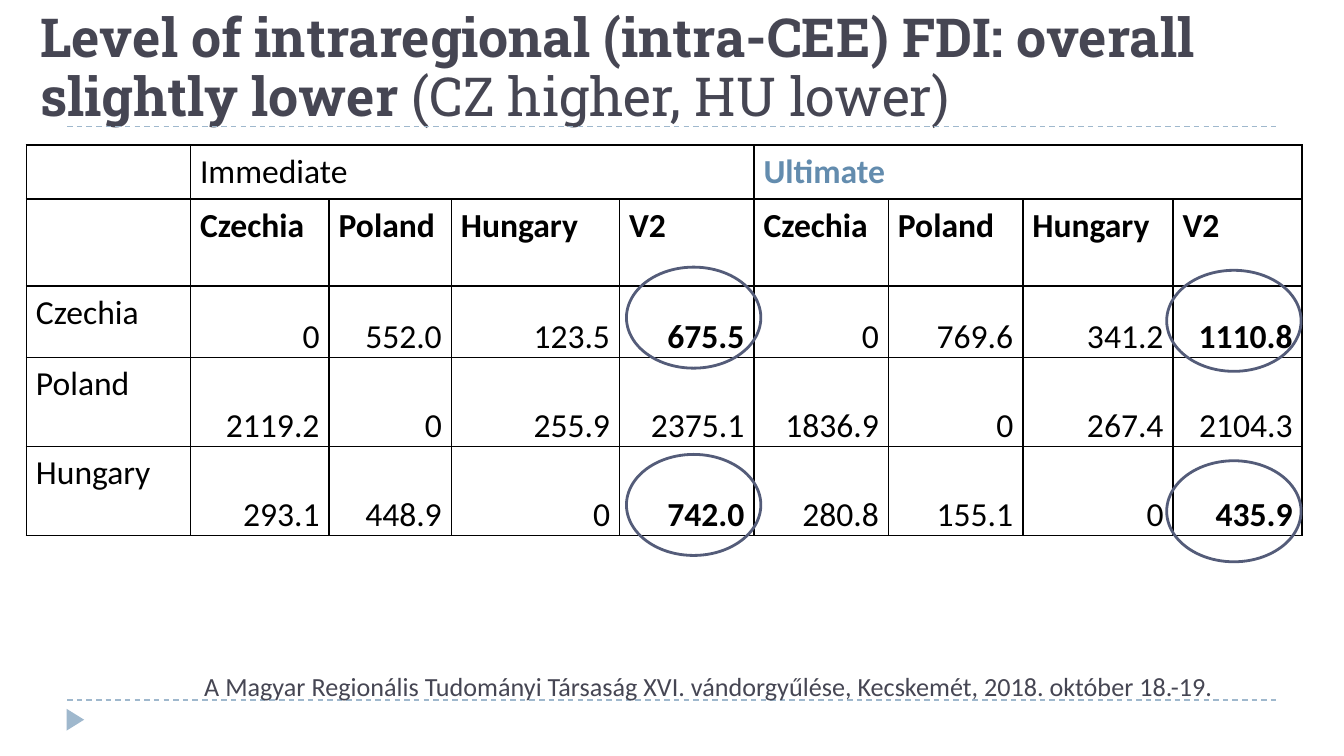
from typing import NamedTuple

from lxml.etree import SubElement
from pptx import Presentation
from pptx.dml.color import RGBColor
from pptx.enum.dml import MSO_LINE_DASH_STYLE as Dash
from pptx.enum.shapes import MSO_CONNECTOR as Connector, MSO_SHAPE as Shape
from pptx.enum.text import MSO_ANCHOR as Anchor, MSO_AUTO_SIZE as AutoSize, PP_ALIGN as Align
from pptx.oxml.ns import qn
from pptx.util import Cm, Pt

BLACK, SLATE, ACCENT, PALE, RING = "000000", "464653", "638CAE", "9FB8CD", "545C79"


class Ring(NamedTuple):
    left: float
    top: float


class FdiRow(NamedTuple):
    country: str
    immediate: tuple[str, ...]
    ultimate: tuple[str, ...]
    bold_totals: bool


COUNTRIES = ("Czechia", "Poland", "Hungary", "V2")
FDI_ROWS = [
    FdiRow("Czechia", ("0", "552.0", "123.5", "675.5"), ("0", "769.6", "341.2", "1110.8"), True),
    FdiRow("Poland", ("2119.2", "0", "255.9", "2375.1"), ("1836.9", "0", "267.4", "2104.3"), False),
    FdiRow("Hungary", ("293.1", "448.9", "0", "742.0"), ("280.8", "155.1", "0", "435.9"), True),
]
COLUMN_WIDTHS = (3.1, 2.62, 2.31, 3.18, 2.54, 2.54, 2.54, 2.84, 2.44)
ROW_HEIGHTS = (1.02, 1.65, 1.35, 1.68, 1.68)
RINGS = [Ring(11.84, 5.05), Ring(11.84, 8.59), Ring(22.05, 5.11), Ring(22.05, 8.71)]


def rgb(color: str) -> RGBColor:
    return RGBColor.from_string(color)


def style_run(run, size: float, color: str, bold: bool = False, font: str = "Calibri") -> None:
    run.font.name = font
    run.font.size = Pt(size)
    run.font.bold = bold
    run.font.color.rgb = rgb(color)


def draw_rule(slide, y: float) -> None:
    rule = slide.shapes.add_connector(Connector.STRAIGHT, Cm(1.27), Cm(y), Cm(24.13), Cm(y))
    rule.line.color.rgb = rgb(PALE)
    rule.line.width = Pt(0.75)
    rule.line.dash_style = Dash.DASH
    SubElement(rule._element.spPr, qn("a:effectLst"))


def draw_ring(slide, ring: Ring) -> None:
    oval = slide.shapes.add_shape(Shape.OVAL, Cm(ring.left), Cm(ring.top), Cm(2.54), Cm(1.91))
    oval.shadow.inherit = False
    oval.fill.background()
    oval.line.color.rgb = rgb(RING)
    oval.line.width = Pt(1.5)


def frame_cell(cell) -> None:
    """Black border on every side, no fill, tight margins."""
    properties = cell._tc.get_or_add_tcPr()
    for side in ("a:lnL", "a:lnR", "a:lnT", "a:lnB"):
        border = SubElement(properties, qn(side), w=str(Pt(1)))
        fill = SubElement(border, qn("a:solidFill"))
        SubElement(fill, qn("a:srgbClr"), val=BLACK)
    cell.fill.background()
    cell.margin_left = cell.margin_right = Cm(0.18)
    cell.margin_top = cell.margin_bottom = Cm(0)


def write_cell(cell, text: str, bold: bool = False, color: str = BLACK, number: bool = False) -> None:
    cell.text_frame.text = text
    paragraph = cell.text_frame.paragraphs[0]
    paragraph.line_spacing = 1.15
    if number:
        paragraph.alignment = Align.RIGHT
        cell.vertical_anchor = Anchor.BOTTOM
    style_run(paragraph.runs[0], 18, color, bold)


def draw_fdi_table(slide) -> None:
    table = slide.shapes.add_table(
        len(ROW_HEIGHTS), len(COLUMN_WIDTHS), Cm(0.5), Cm(2.74),
        Cm(sum(COLUMN_WIDTHS)), Cm(sum(ROW_HEIGHTS))).table
    table.first_row = table.horz_banding = False
    for column, width in zip(table.columns, COLUMN_WIDTHS):
        column.width = Cm(width)
    for row, height in zip(table.rows, ROW_HEIGHTS):
        row.height = Cm(height)
    for cell in table.iter_cells():
        frame_cell(cell)

    # Two heading rows: investor type, then country
    for first, heading, bold, color in ((1, "Immediate", False, BLACK), (5, "Ultimate", True, ACCENT)):
        table.cell(0, first).merge(table.cell(0, first + 3))
        write_cell(table.cell(0, first), heading, bold, color)
    for c, country in enumerate(COUNTRIES * 2, start=1):
        write_cell(table.cell(1, c), country, bold=True)

    # Values, with some V2 totals in bold
    for r, fdi in enumerate(FDI_ROWS, start=2):
        write_cell(table.cell(r, 0), fdi.country)
        for c, value in enumerate(fdi.immediate + fdi.ultimate, start=1):
            write_cell(table.cell(r, c), value, bold=fdi.bold_totals and c % 4 == 0, number=True)


def write_title(slide) -> None:
    title = slide.shapes.title
    title.left, title.top, title.width, title.height = Cm(0.51), Cm(0.3), Cm(23.62), Cm(2.24)
    frame = title.text_frame
    frame.auto_size = AutoSize.NONE
    frame.vertical_anchor = Anchor.BOTTOM
    heading = frame.paragraphs[0]
    heading.alignment = Align.LEFT
    heading.line_spacing = 0.9
    for text, bold in (("Level of intraregional (intra-CEE) FDI: overall slightly lower ", True),
                       ("(CZ higher, HU lower)", False)):
        run = heading.add_run()
        run.text = text
        style_run(run, 28.8, SLATE, bold, "Roboto Slab")


def write_conference(slide) -> None:
    conference = slide.shapes.add_textbox(Cm(1.7), Cm(12.55), Cm(21.49), Cm(0.94)).text_frame
    conference.word_wrap = True
    conference.text = ("A Magyar Regionális Tudományi Társaság XVI. vándorgyűlése, "
                       "Kecskemét, 2018. október 18.-19.")
    conference.paragraphs[0].alignment = Align.RIGHT
    style_run(conference.paragraphs[0].runs[0], 14, SLATE)


def main() -> None:
    deck = Presentation()
    deck.slide_width, deck.slide_height = Cm(25.4), Cm(14.29)
    slide = deck.slides.add_slide(deck.slide_layouts[5])

    # Page decoration
    for y in (13.23, 2.39):
        draw_rule(slide, y)
    marker = slide.shapes.add_shape(Shape.ISOSCELES_TRIANGLE, Cm(1.22), Cm(13.44), Cm(0.41), Cm(0.33))
    marker.rotation = 90
    marker.shadow.inherit = False
    marker.fill.solid()
    marker.fill.fore_color.rgb = rgb(PALE)
    marker.line.fill.background()

    # Content
    write_title(slide)
    write_conference(slide)
    draw_fdi_table(slide)
    for ring in RINGS:
        draw_ring(slide, ring)

    deck.save("out.pptx")


if __name__ == "__main__":
    main()
